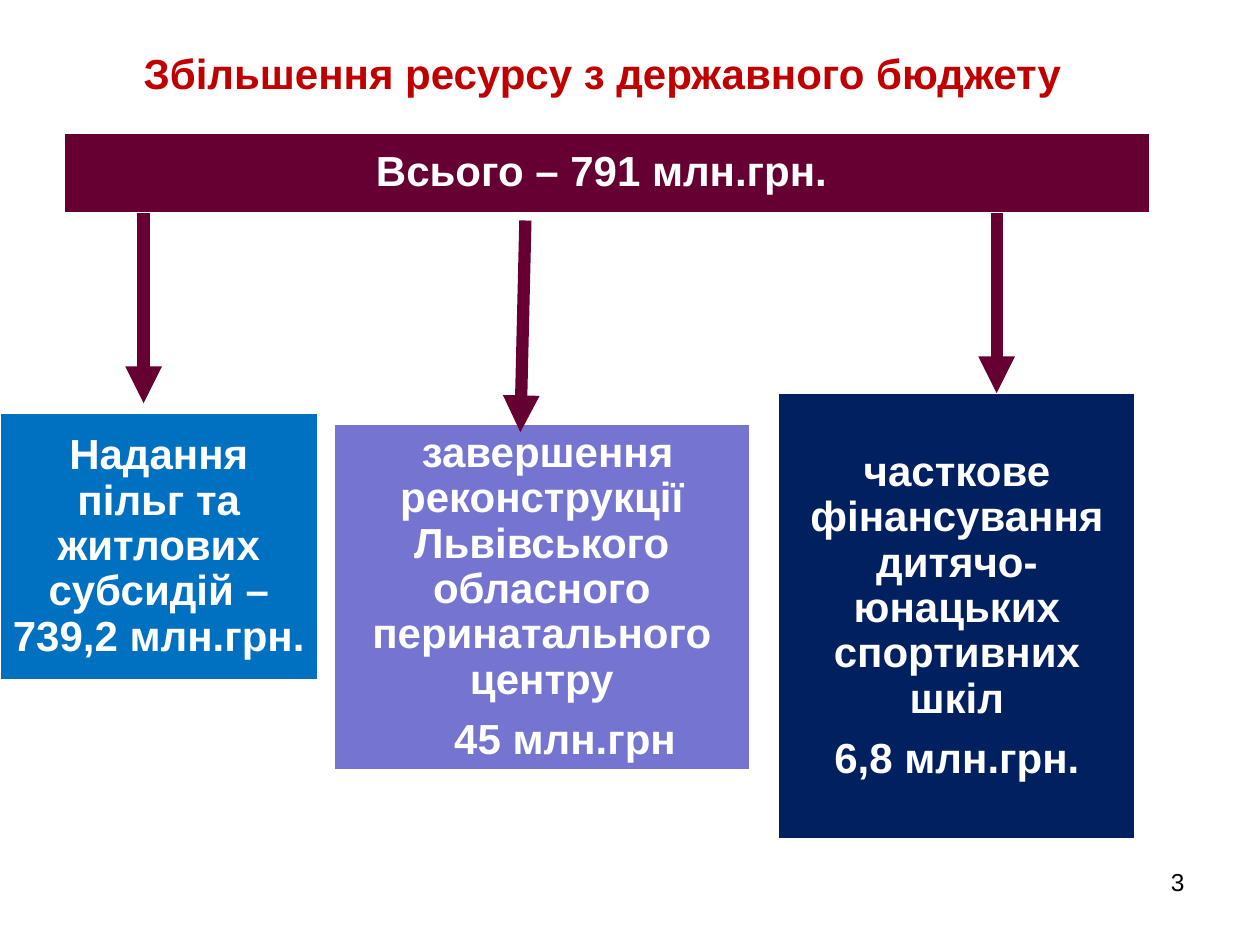
from lxml import etree
from pptx import Presentation
from pptx.dml.color import RGBColor
from pptx.enum import shapes, text
from pptx.oxml.ns import qn
from pptx.util import Inches, Pt

WINE = RGBColor(0x66, 0x00, 0x33)
RED = RGBColor(0xC0, 0x00, 0x00)
BLUE = RGBColor(0x00, 0x70, 0xC0)
LILAC = RGBColor(0x75, 0x75, 0xD1)
NAVY = RGBColor(0x00, 0x20, 0x60)
WHITE = RGBColor(0xFF, 0xFF, 0xFF)
BLACK = RGBColor(0x00, 0x00, 0x00)

# box, fill, paragraphs as (words, left indent)
GRANTS = [
    ((0, 3.28, 2.52, 2.12), BLUE,
     [("Надання пільг та житлових субсидій – 739,2 млн.грн.", 0)]),
    ((2.65, 3.37, 3.3, 2.74), LILAC,
     [(" завершення реконструкції Львівського обласного перинатального центру", 0),
      ("45 млн.грн", 0.37)]),
    ((6.18, 3.12, 2.83, 3.54), NAVY,
     [("часткове фінансування дитячо-юнацьких спортивних шкіл", 0),
      ("6,8 млн.грн.", 0)]),
]
ARROWS = [(1.14, 1.69, 1.14, 3.2), (4.17, 1.75, 4.13, 3.43), (7.91, 1.69, 7.91, 3.12)]


def place(shape, box):
    shape.left, shape.top, shape.width, shape.height = map(Inches, box)


def style(run, size, color, bold=True):
    font = run.font
    font.name, font.size, font.bold = "Arial", Pt(size), bold
    font.color.rgb = color


def write(frame, paras, color):
    """Fill a frame with centred bold paragraphs."""
    frame.word_wrap = True
    frame.auto_size = text.MSO_AUTO_SIZE.NONE
    frame.vertical_anchor = text.MSO_ANCHOR.MIDDLE
    frame.margin_left = frame.margin_right = Inches(0.1)
    frame.margin_top = frame.margin_bottom = Inches(0.1)
    for i, (words, indent) in enumerate(paras):
        para = frame.add_paragraph() if i else frame.paragraphs[0]
        para.alignment = text.PP_ALIGN.CENTER
        para.line_spacing = 0.9
        para.space_before, para.space_after = Pt(0), Pt(8.4)
        if indent:
            para._p.get_or_add_pPr().set("marL", str(Inches(indent)))
        run = para.add_run()
        run.text = words
        style(run, 24, color)


def add_title(slide, box):
    title = slide.shapes.title
    place(title, box)
    write(title.text_frame, [(" Збільшення ресурсу з державного бюджету", 0)], RED)


def add_block(slide, box, fill, paras):
    block = slide.shapes.add_shape(shapes.MSO_SHAPE.RECTANGLE, *map(Inches, box))
    block.shadow.inherit = False
    block.fill.solid()
    block.fill.fore_color.rgb = fill
    block.line.color.rgb = WHITE
    block.line.width = Pt(1)
    write(block.text_frame, paras, WHITE)


def add_arrow(slide, ends):
    arrow = slide.shapes.add_connector(shapes.MSO_CONNECTOR.STRAIGHT, *map(Inches, ends))
    arrow.line.color.rgb = WINE
    arrow.line.width = Pt(7)
    etree.SubElement(arrow.line._get_or_add_ln(), qn("a:tailEnd"), type="triangle")
    etree.SubElement(arrow._element.spPr, qn("a:effectLst"))


def add_number(slide, box):
    frame = slide.shapes.add_textbox(*map(Inches, box)).text_frame
    frame.word_wrap = True
    para = frame.paragraphs[0]
    para.alignment = text.PP_ALIGN.RIGHT
    run = para.add_run()
    run.text = "3"
    style(run, 14, BLACK, False)


def main():
    deck = Presentation()
    deck.slide_width, deck.slide_height = Inches(10), Inches(7.5)
    slide = deck.slides.add_slide(deck.slide_layouts[5])
    add_title(slide, (0.64, 0.28, 8.19, 0.64))
    add_block(slide, (0.51, 1.06, 8.62, 0.63), WINE, [("Всього – 791 млн.грн. ", 0)])
    for grant in GRANTS:
        add_block(slide, *grant)
    for ends in ARROWS:
        add_arrow(slide, ends)
    add_number(slide, (7.17, 6.83, 2.33, 0.52))
    deck.save("out.pptx")


if __name__ == "__main__":
    main()
